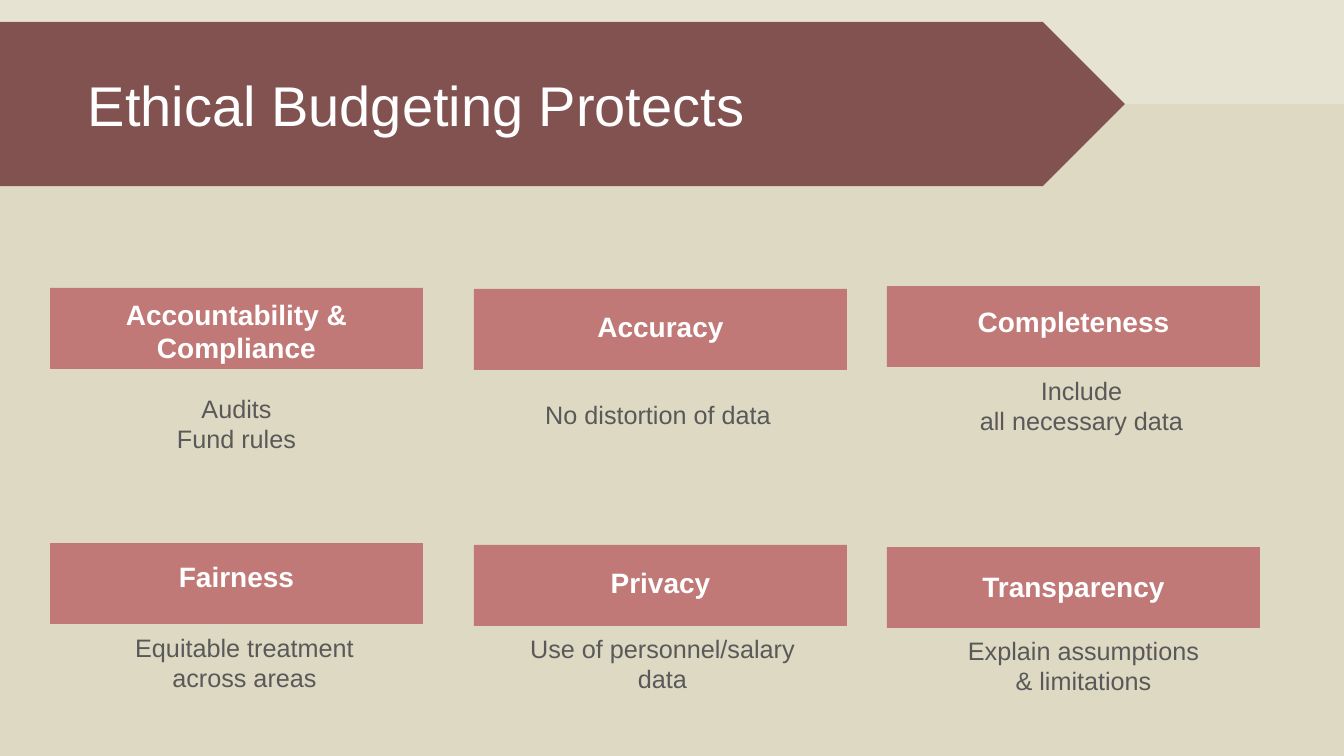
from dataclasses import dataclass

import pptx
import pptx.dml.color
import pptx.enum.shapes
import pptx.enum.text
import pptx.util

EMU_PER_PX = 914400 / 100.8
SLIDE_W, SLIDE_H = 1344, 756
BAR_W, BAR_H = 373, 81
COLUMNS = (50, 474, 887)
FONT = "Arial"
COLORS = {
    "top": "E6E3D2",
    "body": "DDD9C3",
    "banner": "825251",
    "bar": "C07977",
    "light": "FFFFFF",
    "text": "595959",
}
SHAPE = pptx.enum.shapes.MSO_SHAPE
ALIGN = pptx.enum.text.PP_ALIGN
ANCHOR = pptx.enum.text.MSO_ANCHOR


@dataclass
class Card:
    column: int
    top: int
    heading: str
    heading_inset: int
    lines: list[str]
    text_left: int
    text_top: int
    text_width: int = 305
    text_height: int = 72


CARDS = [
    Card(0, 288, "Accountability & Compliance", 9, ["Audits", "Fund rules"], 84, 388),
    Card(1, 289, "Accuracy", 20, ["No distortion of data"], 530, 394, 256, 40),
    Card(2, 286, "Completeness", 18, ["Include", "all necessary data"], 929, 370),
    Card(0, 543, "Fairness", 16, ["Equitable treatment across areas"], 92, 627),
    Card(1, 545, "Privacy", 20, ["Use of personnel/salary data"], 510, 628),
    Card(2, 547, "Transparency", 22, ["Explain assumptions", "& limitations"], 931, 630),
]


def px(n: int) -> pptx.util.Emu:
    return pptx.util.Emu(round(n * EMU_PER_PX))


def rgb(name: str) -> pptx.dml.color.RGBColor:
    return pptx.dml.color.RGBColor.from_string(COLORS[name])


def add_block(slide, kind, left: int, top: int, width: int, height: int, color: str):
    sp = slide.shapes.add_shape(kind, px(left), px(top), px(width), px(height))
    sp.shadow.inherit = False
    sp.fill.solid()
    sp.fill.fore_color.rgb = rgb(color)
    sp.line.fill.background()
    return sp


def write(sp, lines: list[str], *, size: int, color: str, bold: bool = False,
          align=ALIGN.CENTER, anchor=ANCHOR.TOP,
          margins: tuple[int, int, int, int] = (10, 5, 10, 5)) -> None:
    """Fill a shape with one paragraph per line; margins run left, top, right, bottom."""
    tf = sp.text_frame
    tf.word_wrap = True
    tf.vertical_anchor = anchor
    tf.margin_left, tf.margin_top, tf.margin_right, tf.margin_bottom = map(px, margins)
    for i, line in enumerate(lines):
        p = tf.paragraphs[0] if i == 0 else tf.add_paragraph()
        p.alignment = align
        r = p.add_run()
        r.text = line
        r.font.name = FONT
        r.font.size = pptx.util.Pt(size)
        r.font.bold = bold
        r.font.color.rgb = rgb(color)


def add_card(slide, card: Card) -> None:
    bar = add_block(slide, SHAPE.RECTANGLE, COLUMNS[card.column], card.top,
                    BAR_W, BAR_H, "bar")
    write(bar, [card.heading], size=20, color="light", bold=True,
          margins=(4, card.heading_inset, 4, 0))
    box = slide.shapes.add_textbox(px(card.text_left), px(card.text_top),
                                   px(card.text_width), px(card.text_height))
    write(box, card.lines, size=18, color="text")


def main() -> None:
    prs = pptx.Presentation()
    prs.slide_width, prs.slide_height = px(SLIDE_W), px(SLIDE_H)
    slide = prs.slides.add_slide(prs.slide_layouts[6])
    slide.background.fill.solid()
    slide.background.fill.fore_color.rgb = rgb("top")

    add_block(slide, SHAPE.RECTANGLE, 0, 104, SLIDE_W, SLIDE_H - 104, "body")
    banner = add_block(slide, SHAPE.PENTAGON, 0, 22, 1125, 164, "banner")
    write(banner, ["Ethical Budgeting Protects"], size=40, color="light",
          align=ALIGN.LEFT, anchor=ANCHOR.MIDDLE, margins=(88, 5, 10, 5))
    for card in CARDS:
        add_card(slide, card)
    prs.save("out.pptx")


if __name__ == "__main__":
    main()
